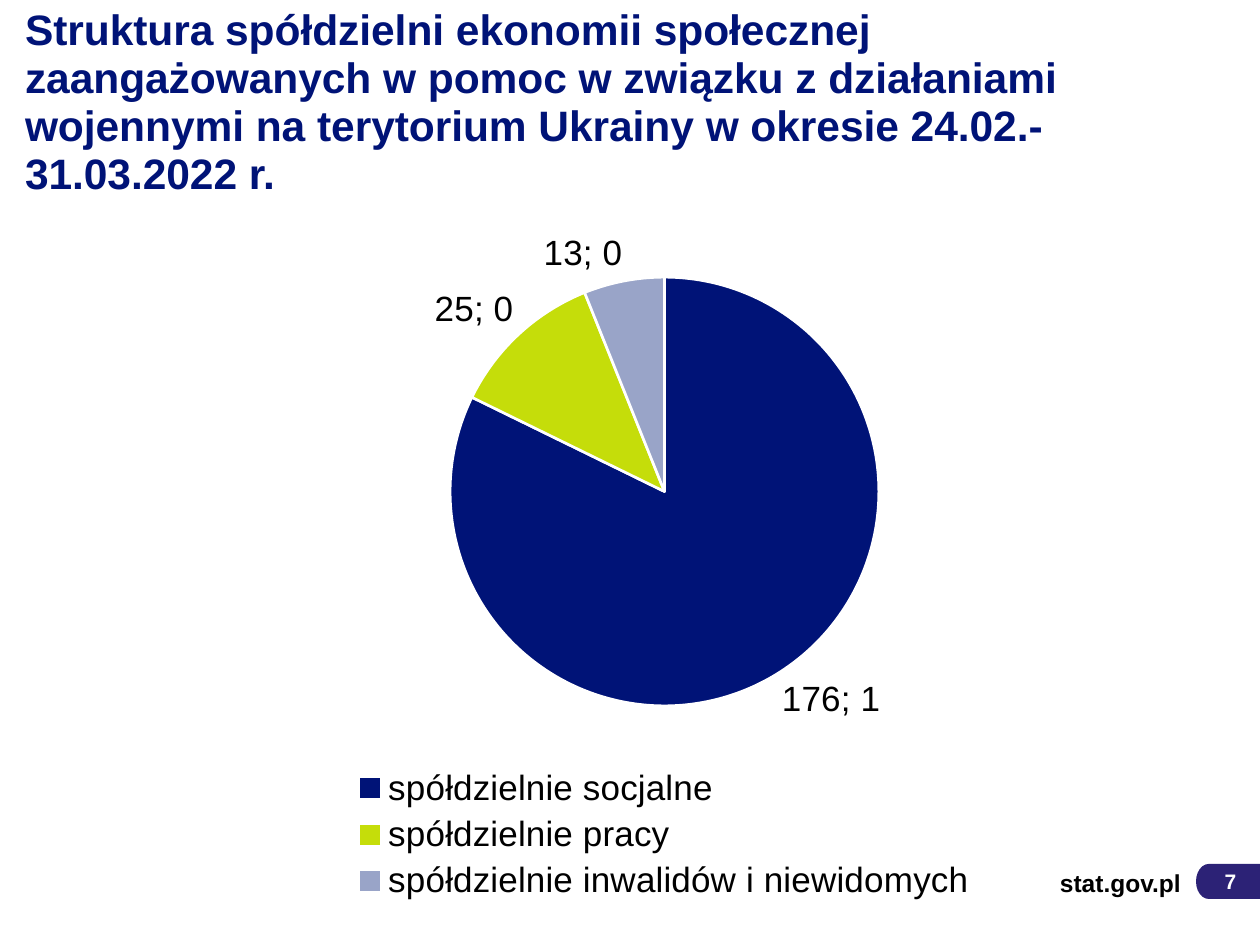
from lxml import etree
from pptx import Presentation
from pptx.chart.data import CategoryChartData
from pptx.dml.color import RGBColor
from pptx.enum.chart import XL_CHART_TYPE as ChartType
from pptx.enum.chart import XL_LABEL_POSITION as LabelPosition
from pptx.enum.chart import XL_LEGEND_POSITION as LegendPosition
from pptx.enum.shapes import MSO_SHAPE as Preset
from pptx.enum.text import MSO_ANCHOR as Anchor
from pptx.enum.text import MSO_AUTO_SIZE as AutoSize
from pptx.enum.text import PP_ALIGN as Align
from pptx.oxml import parse_xml
from pptx.oxml.ns import qn
from pptx.util import Pt

TITLE = (
    "Struktura spółdzielni ekonomii społecznej zaangażowanych w pomoc "
    "w związku z\u00a0działaniami wojennymi na terytorium Ukrainy "
    "w okresie 24.02.-31.03.2022 r."
)
SITE = "stat.gov.pl"
PAGE = "7"

NAVY = RGBColor(0x00, 0x13, 0x77)
LIME = RGBColor(0xC5, 0xDD, 0x0A)
LAVENDER = RGBColor(0x99, 0xA4, 0xC8)
INDIGO = RGBColor(0x2C, 0x22, 0x76)
BLACK = RGBColor(0, 0, 0)
WHITE = RGBColor(0xFF, 0xFF, 0xFF)

COOPERATIVES = [
    ("spółdzielnie socjalne", 176, NAVY),
    ("spółdzielnie pracy", 25, LIME),
    ("spółdzielnie inwalidów i niewidomych", 13, LAVENDER),
]
PIE_AREA = {"x": 0.32, "y": 0.09, "w": 0.36, "h": 0.62}
CHART_NS = "http://schemas.openxmlformats.org/drawingml/2006/chart"
SCALE = 914400 / 126


def px(length):
    return round(length * SCALE)


def box(*lengths):
    return [px(length) for length in lengths]


def set_font(font, size, color, bold=False):
    for name, value in {"name": "Arial", "size": Pt(size), "bold": bold}.items():
        setattr(font, name, value)
    font.color.rgb = color


def write(shape, text, size, color, align, anchor, insets, spacing=None):
    frame = shape.text_frame
    left, top, right, bottom = box(*insets)
    settings = {
        "text": text, "word_wrap": True, "auto_size": AutoSize.NONE,
        "vertical_anchor": anchor, "margin_left": left, "margin_top": top,
        "margin_right": right, "margin_bottom": bottom,
    }
    for name, value in settings.items():
        setattr(frame, name, value)
    line = frame.paragraphs[0]
    line.alignment = align
    if spacing:
        line.line_spacing = spacing
    set_font(line.runs[0].font, size, color, bold=True)


def add_title(slide):
    title = slide.shapes.title
    title.left, title.top, title.width, title.height = box(25, 106, 1191, 99)
    write(title, TITLE, 24.3, NAVY, Align.LEFT, Anchor.BOTTOM, (0, 6, 0, 6), 0.94)


def add_pie(slide):
    names, counts, colors = zip(*COOPERATIVES)
    structure = CategoryChartData(number_format="#,##0")
    structure.categories = names
    structure.add_series("Series 1", counts)
    chart = slide.shapes.add_chart(
        ChartType.PIE, *box(69, 214, 1191, 694), structure).chart
    set_font(chart.font, 20, BLACK)
    chart.has_title = False
    chart.has_legend = True
    chart.legend.position = LegendPosition.BOTTOM
    chart.legend.include_in_layout = False
    set_font(chart.legend.font, 20, BLACK)

    plot = chart.plots[0]
    plot.vary_by_categories = True
    pie = plot.series[0]
    for index, color in enumerate(colors):
        slice_format = pie.points[index].format
        slice_format.fill.solid()
        slice_format.fill.fore_color.rgb = color
        slice_format.line.color.rgb = WHITE
        slice_format.line.width = Pt(1.5)

    labels = pie.data_labels
    label_settings = {
        "show_value": True, "show_percentage": True, "number_format": "#,##0",
        "number_format_is_linked": False, "position": LabelPosition.OUTSIDE_END,
    }
    for name, value in label_settings.items():
        setattr(labels, name, value)
    set_font(labels.font, 20, BLACK)
    separator = etree.Element(qn("c:separator"))
    separator.text = "; "
    labels._element.find(qn("c:showBubbleSize")).addnext(separator)

    plot_area = chart._chartSpace.chart.plotArea
    for layout in plot_area.findall(qn("c:layout")):
        plot_area.remove(layout)
    sizes = "".join(f'<c:{key} val="{value}"/>' for key, value in PIE_AREA.items())
    plot_area.insert(0, parse_xml(
        f'<c:layout xmlns:c="{CHART_NS}"><c:manualLayout>'
        '<c:layoutTarget val="inner"/><c:xMode val="edge"/><c:yMode val="edge"/>'
        f'{sizes}</c:manualLayout></c:layout>'))


def add_footer(slide):
    badge = slide.shapes.add_shape(
        Preset.FLOWCHART_TERMINATOR, *box(1196, 864, 79, 35))
    badge.shadow.inherit = False
    badge.fill.solid()
    badge.fill.fore_color.rgb = INDIGO
    badge.line.fill.background()
    write(badge, PAGE, 12, WHITE, Align.RIGHT, Anchor.MIDDLE, (5, 6, 35, 6))
    site = slide.shapes.add_textbox(*box(1032, 861, 149, 43))
    write(site, SITE, 14, BLACK, Align.RIGHT, Anchor.MIDDLE, (0, 6, 0, 6))


def main():
    deck = Presentation()
    deck.slide_width, deck.slide_height = box(1260, 945)
    slide = deck.slides.add_slide(deck.slide_layouts[5])
    add_footer(slide)
    add_pie(slide)
    add_title(slide)
    deck.save("out.pptx")


if __name__ == "__main__":
    main()
